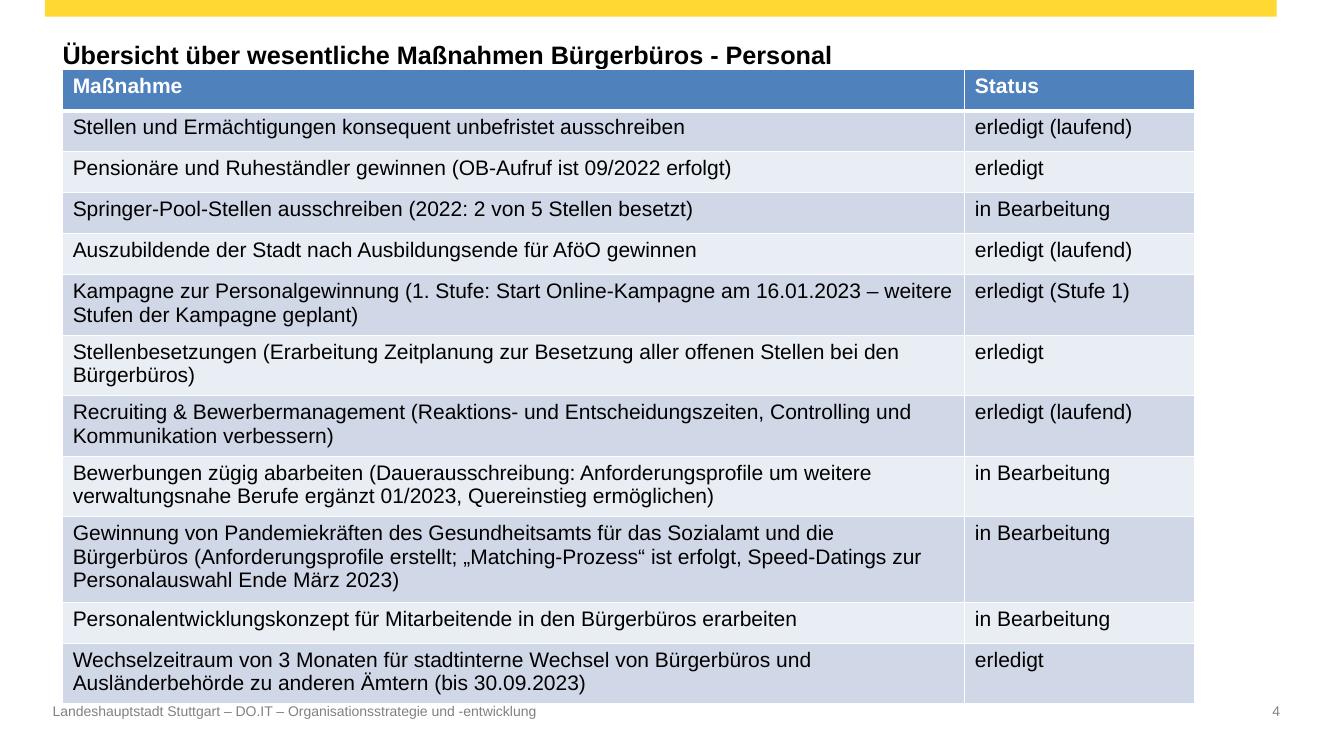
"""Build the slide listing the staffing measures of the citizens' offices."""
from lxml.etree import SubElement
from pptx import Presentation
from pptx.dml.color import RGBColor
from pptx.enum.shapes import MSO_SHAPE as Shape
from pptx.enum.text import MSO_ANCHOR as Anchor, PP_ALIGN as Align
from pptx.oxml.ns import qn
from pptx.util import Pt

TITLE = "Übersicht über wesentliche Maßnahmen Bürgerbüros - Personal"
FOOTER = "Landeshauptstadt Stuttgart – DO.IT – Organisationsstrategie und -entwicklung"
PAGE_NUMBER = "4"
MEASURES = [
    ("Maßnahme", "Status"),
    ("Stellen und Ermächtigungen konsequent unbefristet ausschreiben", "erledigt (laufend)"),
    ("Pensionäre und Ruheständler gewinnen (OB-Aufruf ist 09/2022 erfolgt)", "erledigt"),
    ("Springer-Pool-Stellen ausschreiben (2022: 2 von 5 Stellen besetzt)", "in Bearbeitung"),
    ("Auszubildende der Stadt nach Ausbildungsende für AföO gewinnen", "erledigt (laufend)"),
    ("Kampagne zur Personalgewinnung (1. Stufe: Start Online-Kampagne am 16.01.2023 "
     "– weitere Stufen der Kampagne geplant)", "erledigt (Stufe 1)"),
    ("Stellenbesetzungen (Erarbeitung Zeitplanung zur Besetzung aller offenen Stellen "
     "bei den Bürgerbüros)", "erledigt"),
    ("Recruiting & Bewerbermanagement (Reaktions- und Entscheidungszeiten, Controlling "
     "und Kommunikation verbessern)", "erledigt (laufend)"),
    ("Bewerbungen zügig abarbeiten (Dauerausschreibung: Anforderungsprofile um weitere "
     "verwaltungsnahe Berufe ergänzt 01/2023, Quereinstieg ermöglichen)", "in Bearbeitung"),
    ("Gewinnung von Pandemiekräften des Gesundheitsamts für das Sozialamt und die "
     "Bürgerbüros (Anforderungsprofile erstellt; „Matching-Prozess“ ist erfolgt, "
     "Speed-Datings zur Personalauswahl Ende März 2023)", "in Bearbeitung"),
    ("Personalentwicklungskonzept für Mitarbeitende in den Bürgerbüros erarbeiten",
     "in Bearbeitung"),
    ("Wechselzeitraum von 3 Monaten für stadtinterne Wechsel von Bürgerbüros und "
     "Ausländerbehörde zu anderen Ämtern (bis 30.09.2023)", "erledigt"),
]
COLORS = {"yellow": "FFD833", "gray": "818181", "black": "000000", "white": "FFFFFF",
          "header": "4F81BD", "odd": "D0D8E8", "even": "E9EDF4"}
COLUMN_WIDTHS = (644.4, 164.2)
ROW_HEIGHT = 29.3


def color(name):
    return RGBColor.from_string(COLORS[name])


def set_font(paragraph, size, color_name, bold=False):
    font = paragraph.font
    font.name, font.size, font.bold = "Arial", Pt(size), bold
    font.color.rgb = color(color_name)


def add_text(slide, text, box, size, color_name, bold=False, inset=(0, 0),
             anchor=Anchor.TOP, align=Align.LEFT):
    frame = slide.shapes.add_textbox(*map(Pt, box)).text_frame
    frame.word_wrap = True
    frame.vertical_anchor = anchor
    frame.margin_left = frame.margin_right = Pt(inset[0])
    frame.margin_top = frame.margin_bottom = Pt(inset[1])
    paragraph = frame.paragraphs[0]
    paragraph.text, paragraph.alignment = text, align
    set_font(paragraph, size, color_name, bold)


def add_borders(cell, row):
    properties = cell._tc.get_or_add_tcPr()
    widths = {"L": 1, "R": 1, "T": 3 if row == 1 else 1, "B": 3 if row == 0 else 1}
    for side, width in widths.items():
        line = SubElement(properties, qn(f"a:ln{side}"), w=str(Pt(width)))
        SubElement(SubElement(line, qn("a:solidFill")), qn("a:srgbClr"), val=COLORS["white"])


def add_measures(slide):
    table = slide.shapes.add_table(
        len(MEASURES), len(COLUMN_WIDTHS), Pt(44.8), Pt(49.8),
        Pt(sum(COLUMN_WIDTHS)), Pt(ROW_HEIGHT * len(MEASURES))).table
    for column, width in zip(table.columns, COLUMN_WIDTHS):
        column.width = Pt(width)
    for row, texts in enumerate(MEASURES):
        table.rows[row].height = Pt(ROW_HEIGHT)
        header = row == 0
        fill_name = "header" if header else "odd" if row % 2 else "even"
        for column, text in enumerate(texts):
            cell = table.cell(row, column)
            add_borders(cell, row)
            cell.fill.solid()
            cell.fill.fore_color.rgb = color(fill_name)
            cell.text = text
            set_font(cell.text_frame.paragraphs[0], 15, "white" if header else "black", header)


def main():
    presentation = Presentation()
    presentation.slide_width, presentation.slide_height = Pt(960), Pt(540)
    slide = presentation.slides.add_slide(presentation.slide_layouts[6])
    bar = slide.shapes.add_shape(Shape.RECTANGLE, Pt(32), Pt(0), Pt(880), Pt(12))
    bar.shadow.inherit = False
    bar.fill.solid()
    bar.fill.fore_color.rgb = color("yellow")
    bar.line.fill.background()
    add_text(slide, PAGE_NUMBER, (835.2, 502, 79.2, 28), 10, "gray", align=Align.RIGHT)
    add_text(slide, FOOTER, (37.6, 502, 529.2, 28), 10, "gray")
    add_text(slide, TITLE, (37.6, 15.2, 648.7, 46.8), 18, "black", True, (7.2, 3.6),
             Anchor.MIDDLE)
    add_measures(slide)
    presentation.save("out.pptx")


if __name__ == "__main__":
    main()
